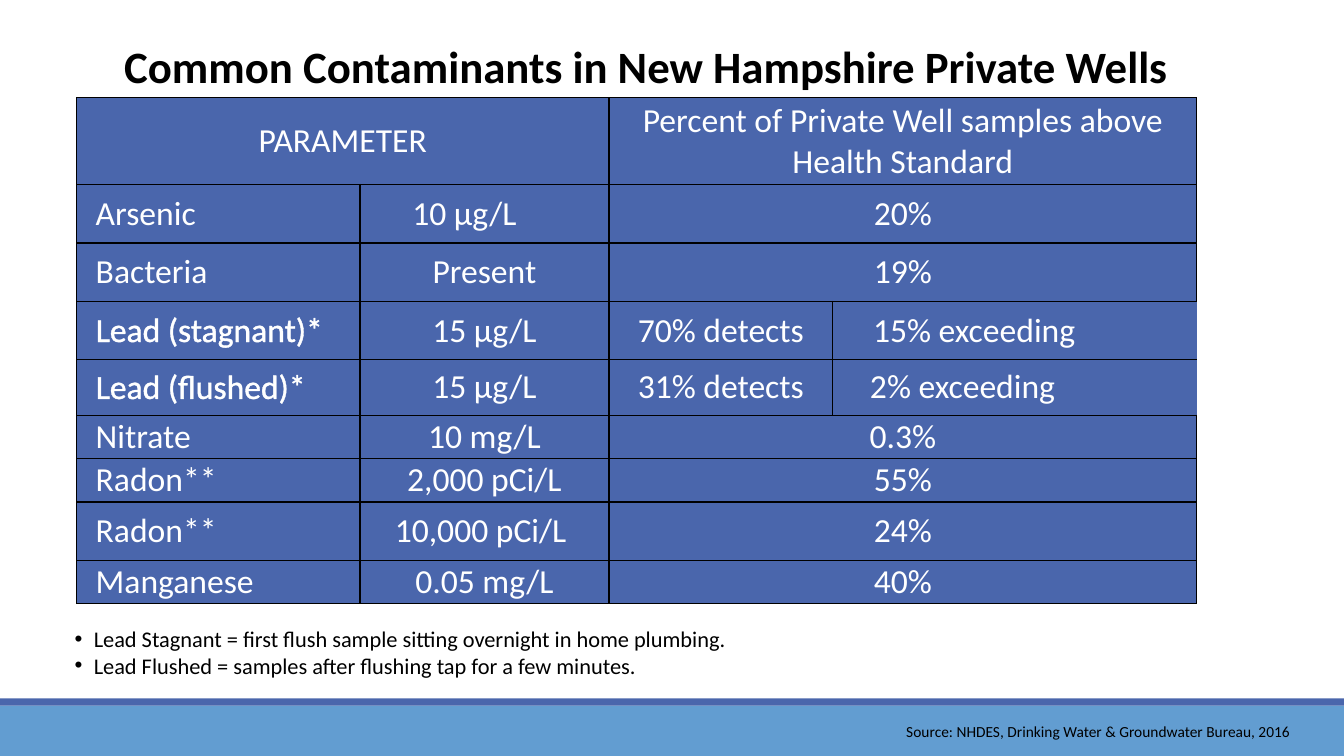
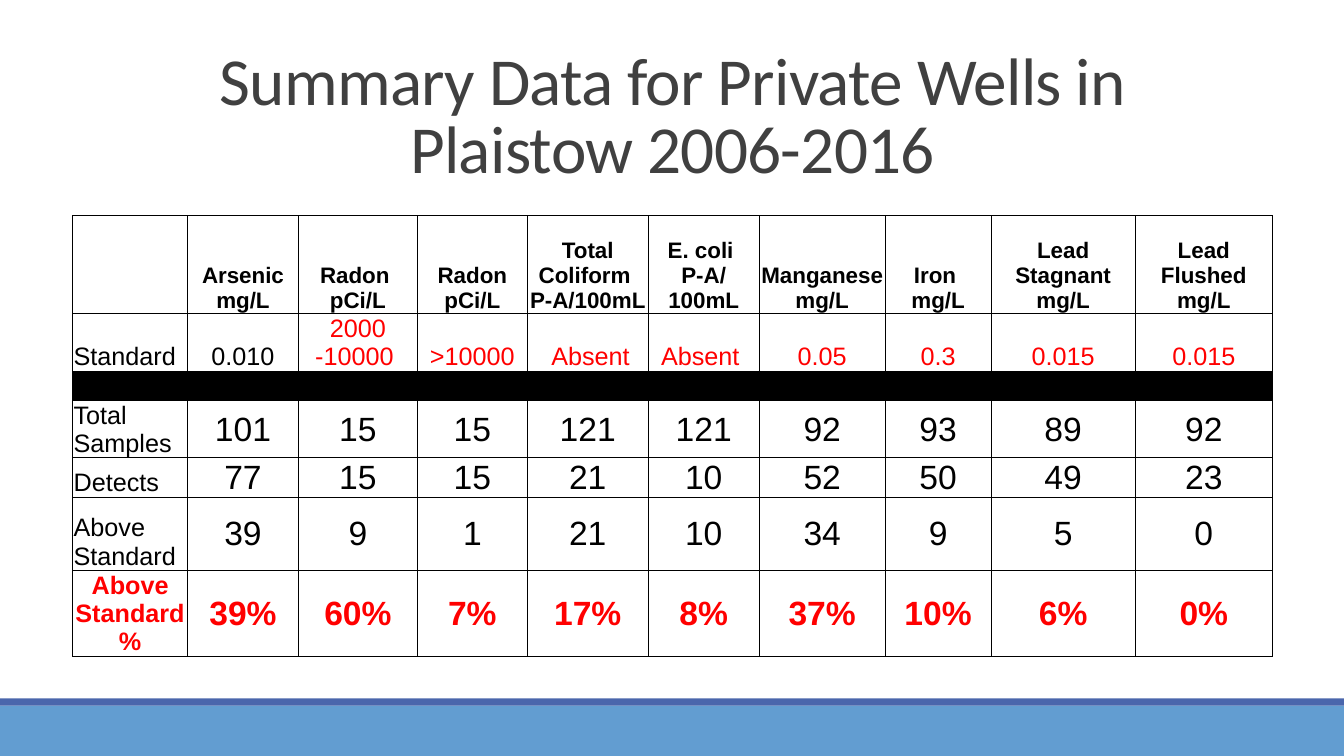
from dataclasses import dataclass, replace
from typing import Any

from lxml.etree import SubElement
from pptx import Presentation
from pptx.dml.color import RGBColor
from pptx.enum.shapes import MSO_SHAPE as Preset
from pptx.enum.text import MSO_ANCHOR as Anchor, MSO_AUTO_SIZE as AutoSize, PP_ALIGN as Align
from pptx.oxml.ns import qn
from pptx.util import Inches, Pt

BLACK, WHITE, RED, GRAY = "000000", "FFFFFF", "FF0000", "404040"
NAVY, SKY = "4A66AC", "629DD1"
PLAIN_TABLE = "{2D5ABB26-0587-4C30-8999-92F81FD0307C}"
TITLE_ONLY, TITLE_AND_BODY = 5, 1


@dataclass(frozen=True)
class Place:
    left: float
    top: float
    width: float
    height: float

    def lengths(self) -> list[Any]:
        return [Inches(n) for n in (self.left, self.top, self.width, self.height)]


@dataclass(frozen=True)
class Style:
    size: float
    color: str = BLACK
    font: str = "Calibri"
    bold: bool = False
    align: Align = Align.LEFT
    anchor: Anchor = Anchor.MIDDLE
    line_spacing: float = 1.0
    tracking: int = 0
    indent: float = 0
    bullet: bool = False
    outline: bool = False


@dataclass(frozen=True)
class Cell:
    text: str
    style: Style


@dataclass(frozen=True)
class Grid:
    place: Place
    columns: list[float]
    rows: list[float]
    fill: str | None
    border: float
    margins: dict[str, float]
    spans: list[tuple[int, int, int]]
    open_right: list[tuple[int, int]]


BANDS = [(Place(0, 7, 13.33, 0.5), SKY), (Place(0, 6.93, 13.33, 0.07), NAVY)]


def assign(target: Any, values: dict[str, Any]) -> None:
    for name, value in values.items():
        setattr(target, name, value)


def paint(color_format: Any, color: str) -> None:
    color_format.rgb = RGBColor.from_string(color)


def fill_solid(target: Any, color: str) -> None:
    target.fill.solid()
    paint(target.fill.fore_color, color)


def add_line(parent: Any, tag: str, width: float, color: str | None) -> Any:
    line = SubElement(parent, qn(tag), w=str(Pt(width)))
    if color is None:
        SubElement(line, qn("a:noFill"))
    else:
        SubElement(SubElement(line, qn("a:solidFill")), qn("a:srgbClr"), val=color)
    return line


def write(frame: Any, text: str, style: Style) -> None:
    frame.text = text
    for para in frame.paragraphs:
        props = para._p.get_or_add_pPr()
        hanging = style.indent if style.bullet else 0
        props.set("marL", str(Inches(style.indent)))
        props.set("indent", str(-Inches(hanging)))
        if style.bullet:
            SubElement(props, qn("a:buFont"), typeface="Arial")
            SubElement(props, qn("a:buChar"), char="•")
        assign(para, {"alignment": style.align, "space_before": Pt(0),
                      "line_spacing": style.line_spacing})
        for span in para.runs:
            assign(span.font, {"name": style.font, "size": Pt(style.size),
                               "bold": style.bold})
            paint(span.font.color, style.color)
            if style.tracking:
                span.font._element.set("spc", str(style.tracking))
            if style.outline:
                line = add_line(span.font._element, "a:ln", 0.75, style.color)
                span.font._element.insert(0, line)
        if not para.runs:
            SubElement(para._p, qn("a:endParaRPr"), sz=str(int(style.size * 100)))


def write_box(box: Any, place: Place, text: str, style: Style, wrap: bool = True) -> None:
    assign(box, dict(zip(("left", "top", "width", "height"), place.lengths())))
    write(box.text_frame, text, style)
    assign(box.text_frame, {"word_wrap": wrap, "auto_size": AutoSize.NONE,
                            "vertical_anchor": style.anchor})


def add_page(deck: Any, layout: int, title: str, place: Place, style: Style) -> Any:
    page = deck.slides.add_slide(deck.slide_layouts[layout])
    for band, color in BANDS:
        shape = page.shapes.add_shape(Preset.RECTANGLE, *band.lengths())
        shape.shadow.inherit = False
        shape.line.fill.background()
        fill_solid(shape, color)
    write_box(page.shapes.title, place, title, style)
    return page


def add_grid(page: Any, grid: Grid, cells: dict[tuple[int, int], Cell]) -> Any:
    frame = page.shapes.add_table(len(grid.rows), len(grid.columns), *grid.place.lengths())
    table = frame.table
    assign(table, {"first_row": False, "horz_banding": False})
    table._tbl.tblPr.find(qn("a:tableStyleId")).text = PLAIN_TABLE
    for column, width in zip(table.columns, grid.columns):
        column.width = Inches(width)
    for row_number, height in enumerate(grid.rows):
        table.rows[row_number].height = Inches(height)
        for column_number in range(len(grid.columns)):
            spot = (row_number, column_number)
            cell = table.cell(*spot)
            props = cell._tc.get_or_add_tcPr()
            for side in "LRTB":
                is_open = side == "R" and spot in grid.open_right
                add_line(props, f"a:ln{side}", grid.border, None if is_open else BLACK)
            if grid.fill:
                fill_solid(cell, grid.fill)
            else:
                cell.fill.background()
            assign(cell, {f"margin_{side}": Inches(n) for side, n in grid.margins.items()})
            if spot in cells:
                cell.vertical_anchor = cells[spot].style.anchor
                write(cell.text_frame, cells[spot].text, cells[spot].style)
    for row_number, first, last in grid.spans:
        table.cell(row_number, first).merge(table.cell(row_number, last))
    return table


def build_contaminants(deck: Any) -> None:
    page = add_page(deck, TITLE_AND_BODY, "Common Contaminants in New Hampshire Private Wells",
                    Place(0.76, 0.33, 11.3, 0.64),
                    Style(32, bold=True, align=Align.CENTER))
    center = Style(24, WHITE, align=Align.CENTER)
    name_style = Style(24, WHITE, indent=0.13)
    lead_style = replace(name_style, outline=True)
    contaminants = [
        ("Arsenic", "10 µg/L", "20%"),
        ("Bacteria", "Present", "19%"),
        ("Lead (stagnant)*", "15 µg/L", "70% detects", "15% exceeding"),
        ("Lead (flushed)*", "15 µg/L", "31% detects", "2% exceeding"),
        ("Nitrate", "10 mg/L", "0.3%"),
        ("Radon**", "2,000 pCi/L", "55%"),
        ("Radon**", "10,000 pCi/L ", "24%"),
        ("Manganese", "0.05 mg/L", "40%"),
    ]
    cells = {(0, 0): Cell("PARAMETER", center),
             (0, 2): Cell("Percent of Private Well samples above Health Standard", center)}
    spans = [(0, 0, 1), (0, 2, 3)]
    open_right = []
    for row_number, entries in enumerate(contaminants, start=1):
        for column_number, text in enumerate(entries):
            cells[row_number, column_number] = Cell(text, center)
        is_lead = len(entries) == 4
        cells[row_number, 0] = Cell(entries[0], lead_style if is_lead else name_style)
        if is_lead:
            open_right.append((row_number, 3))
        else:
            spans.append((row_number, 2, 3))
    for spot, indent in {(1, 1): 0.46, (3, 3): 0.34, (4, 3): 0.31}.items():
        cells[spot] = Cell(cells[spot].text, replace(name_style, indent=indent))
    add_grid(page, Grid(Place(0.76, 0.97, 11.11, 5.01), [2.81, 2.47, 2.22, 3.61],
                        [0.86, 0.58, 0.58, 0.58, 0.55, 0.43, 0.43, 0.58, 0.43], NAVY, 1,
                        {"left": 0.06, "right": 0.06, "top": 0, "bottom": 0},
                        spans, open_right), cells)
    write_box(page.placeholders[1], Place(0.64, 6.15, 12.31, 0.64),
              "Lead Stagnant = first flush sample sitting overnight in home plumbing.\n"
              "Lead Flushed = samples after flushing tap for a few minutes.",
              Style(16, indent=0.19, bullet=True, anchor=Anchor.TOP))
    source_place = Place(8.89, 7.11, 4.06, 0.29)
    source = page.shapes.add_textbox(*source_place.lengths())
    write_box(source, source_place, "Source: NHDES, Drinking Water & Groundwater Bureau, 2016",
              Style(11, anchor=Anchor.TOP), wrap=False)


def build_summary(deck: Any) -> None:
    page = add_page(deck, TITLE_ONLY, "Summary Data for Private Wells in Plaistow 2006-2016",
                    Place(0.99, 0.25, 11.36, 1.66),
                    Style(48, GRAY, align=Align.CENTER, anchor=Anchor.BOTTOM,
                          line_spacing=0.85, tracking=-50))
    label = Style(18, font="Arial", anchor=Anchor.BOTTOM)
    header = replace(label, size=16, bold=True, align=Align.CENTER)
    standard = replace(label, color=RED, align=Align.CENTER)
    count = Style(24, font="Arial", align=Align.CENTER)
    percent_label = replace(standard, bold=True)
    percent = replace(count, color=RED, bold=True)
    empty = replace(label, size=12)
    rows = [
        (empty, header, ["", "Arsenic mg/L", "Radon \npCi/L", "Radon pCi/L",
                         "Total Coliform \nP-A/100mL", "E. coli \nP-A/ 100mL",
                         "Manganese mg/L", "Iron \nmg/L", "Lead Stagnant mg/L",
                         "Lead Flushed mg/L"]),
        (label, standard, ["Standard", "0.010", "2000 -10000 ", ">10000", " Absent",
                           "Absent ", "0.05", "0.3", "0.015", "0.015"]),
        (empty, empty, [""] * 10),
        (label, count, ["Total\nSamples", "101", "15", "15", "121", "121",
                        "92", "93", "89", "92"]),
        (label, count, ["Detects", "77", "15", "15", "21", "10", "52", "50", "49", "23"]),
        (label, count, ["Above Standard", "39", "9", "1", "21", "10", "34", "9", "5", "0"]),
        (percent_label, percent, ["Above Standard %", "39%", "60%", "7%", "17%", "8%",
                                  "37%", "10%", "6%", "0%"]),
    ]
    cells = {(row_number, column_number): Cell(text, value_style if column_number else first_style)
             for row_number, (first_style, value_style, texts) in enumerate(rows)
             for column_number, text in enumerate(texts)}
    cells[1, 1] = Cell("0.010", replace(standard, color=BLACK))
    table = add_grid(page, Grid(Place(0.72, 2.14, 11.9, 4.36),
                                [1.14, 1.1, 1.18, 1.09, 1.2, 1.1, 1.25, 1.05, 1.43, 1.36],
                                [0.97, 0.57, 0.29, 0.57, 0.39, 0.73, 0.84], None, 0.5,
                                {"left": 0.01, "right": 0.01, "top": 0.01, "bottom": 0},
                                [], []), cells)
    for cell in table.rows[2].cells:
        fill_solid(cell, BLACK)


def main() -> None:
    deck = Presentation()
    assign(deck, {"slide_width": Inches(13.33), "slide_height": Inches(7.5)})
    build_contaminants(deck)
    build_summary(deck)
    deck.save("out.pptx")


if __name__ == "__main__":
    main()
